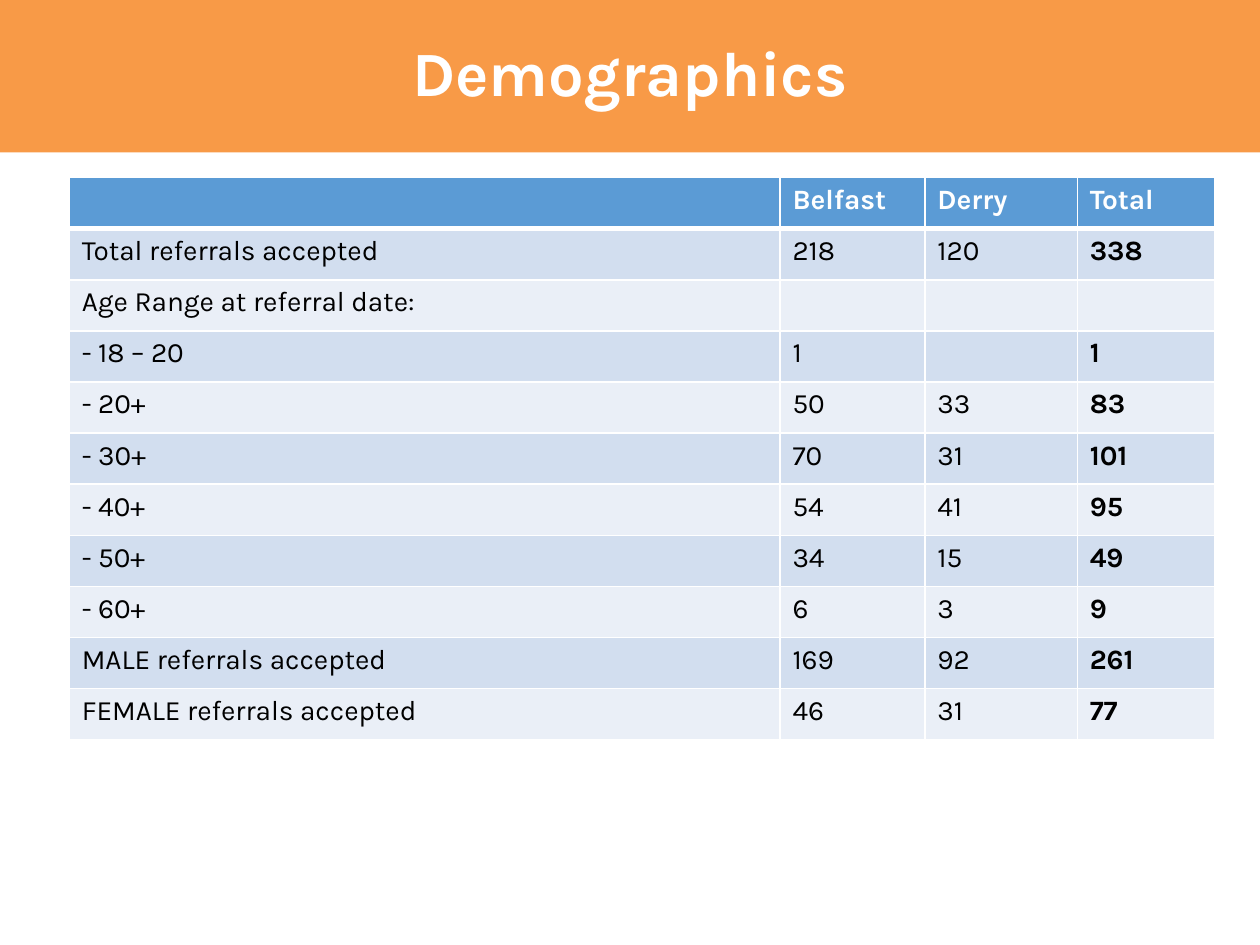
"""Build the Demographics slide: a title band above a table of referrals."""
from dataclasses import dataclass

from lxml.etree import SubElement
from pptx import Presentation
from pptx.dml.color import RGBColor
from pptx.enum.text import MSO_ANCHOR as Anchor, PP_ALIGN as Align
from pptx.oxml.ns import qn
from pptx.util import Inches, Pt

FONT = "Karla"
WIDTH, HEIGHT = Inches(10), Inches(7.5)
COLOURS = {
    "band": "F89A47",
    "header": "5B9BD5",
    "odd": "D2DEEF",
    "even": "EAEFF7",
    "white": "FFFFFF",
    "black": "000000",
}
COLUMN_SHARES = (0.564, 0.115, 0.121, 0.109)
TABLE_LEFT, TABLE_TOP, TABLE_HEIGHT = 0.055, 0.188, 0.595


@dataclass
class ReferralRow:
    label: str
    belfast: str = ""
    derry: str = ""
    total: str = ""

    def values(self) -> tuple[str, ...]:
        return self.label, self.belfast, self.derry, self.total


ROWS = [
    ReferralRow("", "Belfast", "Derry", "Total"),
    ReferralRow("Total referrals accepted", "218", "120", "338"),
    ReferralRow("Age Range at referral date:"),
    ReferralRow("- 18 – 20", "1", "", "1"),
    ReferralRow("- 20+", "50", "33", "83"),
    ReferralRow("- 30+", "70", "31", "101"),
    ReferralRow("- 40+", "54", "41", "95"),
    ReferralRow("- 50+", "34", "15", "49"),
    ReferralRow("- 60+", "6", "3", "9"),
    ReferralRow("MALE referrals accepted", "169", "92", "261"),
    ReferralRow("FEMALE referrals accepted", "46", "31", "77"),
]


def colour(name: str) -> RGBColor:
    return RGBColor.from_string(COLOURS[name])


def format_font(font, size: float, colour_name: str, bold: bool) -> None:
    font.name, font.size, font.bold = FONT, Pt(size), bold
    font.color.rgb = colour(colour_name)


def add_borders(cell, top: float, bottom: float) -> None:
    properties = cell._tc.get_or_add_tcPr()
    for side, points in {"L": 1, "R": 1, "T": top, "B": bottom}.items():
        line = SubElement(properties, qn(f"a:ln{side}"), w=str(Pt(points)))
        fill = SubElement(line, qn("a:solidFill"))
        SubElement(fill, qn("a:srgbClr"), val=COLOURS["white"])


def fill_cell(cell, text: str, row: int, is_total: bool) -> None:
    is_header = row == 0
    add_borders(cell, 3 if row == 1 else 1, 3 if is_header else 1)
    cell.fill.solid()
    cell.fill.fore_color.rgb = colour("header" if is_header else "odd" if row % 2 else "even")
    cell.text_frame.text = text
    text_colour = "white" if is_header else "black"
    paragraph = cell.text_frame.paragraphs[0]
    for target in paragraph.runs or [paragraph]:
        format_font(target.font, 16, text_colour, is_header or is_total)


def add_title(slide, text: str) -> None:
    title = slide.shapes.title
    title.left, title.top, title.width, title.height = 0, 0, WIDTH, Inches(1.21)
    title.fill.solid()
    title.fill.fore_color.rgb = colour("band")
    title.text_frame.text = text
    title.text_frame.vertical_anchor = Anchor.MIDDLE
    paragraph = title.text_frame.paragraphs[0]
    paragraph.alignment, paragraph.line_spacing = Align.CENTER, 0.9
    format_font(paragraph.runs[0].font, 36, "white", True)


def add_referral_table(slide, rows: list[ReferralRow]) -> None:
    table = slide.shapes.add_table(
        len(rows), len(COLUMN_SHARES),
        int(WIDTH * TABLE_LEFT), int(HEIGHT * TABLE_TOP),
        int(WIDTH * sum(COLUMN_SHARES)), int(HEIGHT * TABLE_HEIGHT),
    ).table
    for column, share in zip(table.columns, COLUMN_SHARES):
        column.width = int(WIDTH * share)
    for row, referral in enumerate(rows):
        for column, text in enumerate(referral.values()):
            fill_cell(table.cell(row, column), text, row, column == 3)


def main() -> None:
    presentation = Presentation()
    presentation.slide_width, presentation.slide_height = WIDTH, HEIGHT
    slide = presentation.slides.add_slide(presentation.slide_layouts[5])
    add_title(slide, "Demographics")
    add_referral_table(slide, ROWS)
    presentation.save("out.pptx")


if __name__ == "__main__":
    main()
